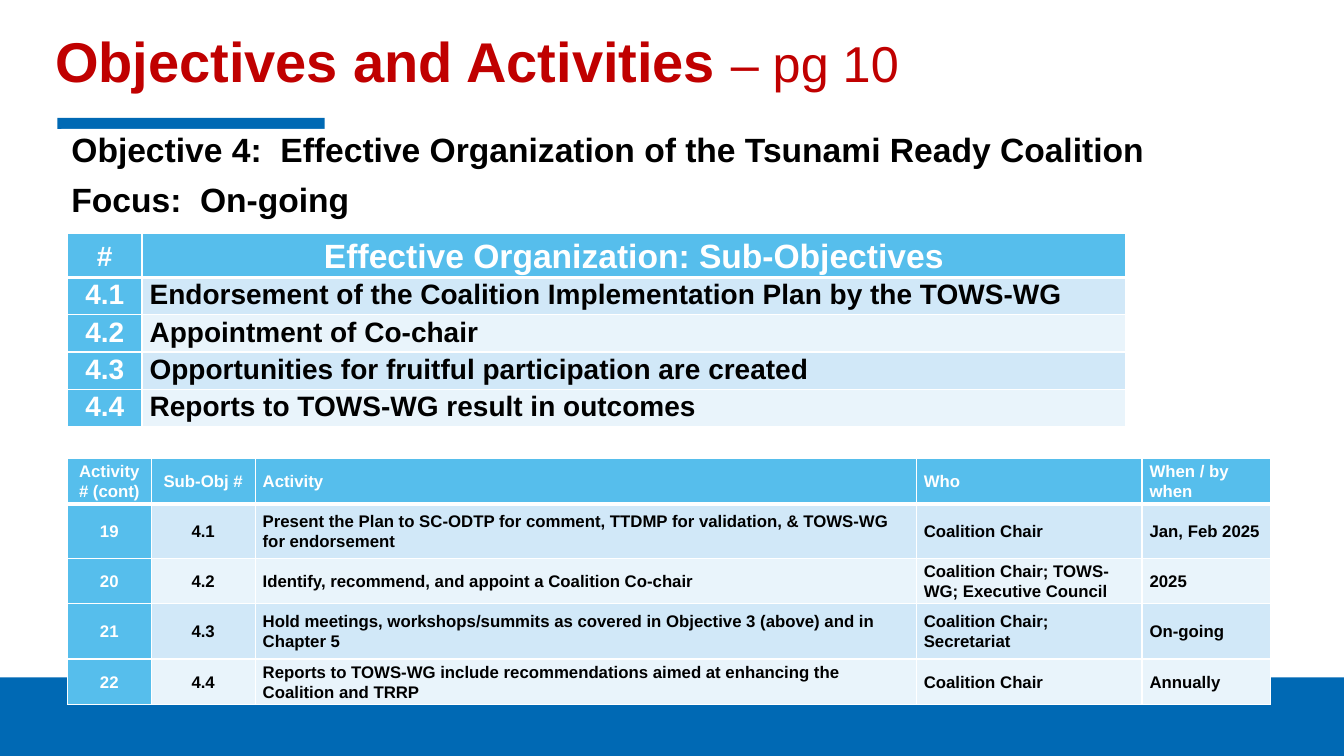
from dataclasses import dataclass

from lxml import etree
from pptx import Presentation, util as u
from pptx.dml.color import RGBColor
from pptx.enum import shapes, text
from pptx.oxml import ns


@dataclass(frozen=True)
class Theme:
    font: str = "Arial"
    title: str = "C00000"
    brand: str = "0069B4"
    header: str = "56BEEC"
    bands: tuple = ("D1E8F8", "E9F4FB")
    light: str = "FFFFFF"
    dark: str = "000000"
    title_size: int = 40
    page_size: int = 36
    body_size: int = 24
    sub_size: int = 20
    small_size: int = 12


SUB_OBJECTIVES = [
    ["#", "Effective Organization: Sub-Objectives"],
    ["4.1", "Endorsement of the Coalition Implementation Plan by the TOWS-WG"],
    ["4.2", "Appointment of Co-chair"],
    ["4.3", "Opportunities for fruitful participation are created"],
    ["4.4", "Reports to TOWS-WG result in outcomes"],
]
ACTIVITIES = [
    ["Activity # (cont)", "Sub-Obj #", "Activity", "Who", "When / by when"],
    ["19", "4.1", "Present the Plan to SC-ODTP for comment, TTDMP for validation, "
     "& TOWS-WG for endorsement", "Coalition Chair", "Jan, Feb 2025"],
    ["20", "4.2", "Identify, recommend, and appoint a Coalition Co-chair",
     "Coalition Chair; TOWS-WG; Executive Council", "2025"],
    ["21", "4.3", "Hold meetings, workshops/summits as covered in Objective 3 (above) "
     "and in Chapter 5", "Coalition Chair; Secretariat", "On-going"],
    ["22", "4.4", "Reports to TOWS-WG include recommendations aimed at enhancing the "
     "Coalition and TRRP", "Coalition Chair", "Annually"],
]


def add_run(p, content, *, size, color, font, bold=True):
    r = p.add_run()
    r.text = content
    r.font.size, r.font.name, r.font.bold = u.Pt(size), font, bold
    r.font.color.rgb = RGBColor.from_string(color)


def set_borders(cell, color, **widths):
    """Draw cell edges; widths maps L, R, T and B to points."""
    tcPr = cell._tc.get_or_add_tcPr()
    for i, (side, width) in enumerate(widths.items()):
        ln = etree.Element(ns.qn(f"a:ln{side}"), w=str(u.Pt(width)))
        fill = etree.SubElement(ln, ns.qn("a:solidFill"))
        etree.SubElement(fill, ns.qn("a:srgbClr"), val=color)
        tcPr.insert(i, ln)


class Deck:
    def __init__(self, prs, theme):
        self.theme = theme
        self.s = prs.slides.add_slide(prs.slide_layouts[6])

    def rect(self, box, color):
        sp = self.s.shapes.add_shape(shapes.MSO_SHAPE.RECTANGLE, *map(u.Cm, box))
        sp.shadow.inherit = False
        sp.fill.solid()
        sp.fill.fore_color.rgb = RGBColor.from_string(color)
        sp.line.fill.background()

    def text_box(self, box, paragraphs, anchor, fill=None):
        """Each paragraph is a list of (text, size, color, bold) runs."""
        sp = self.s.shapes.add_textbox(*map(u.Cm, box))
        if fill:
            sp.fill.solid()
            sp.fill.fore_color.rgb = RGBColor.from_string(fill)
        tf = sp.text_frame
        tf.word_wrap, tf.vertical_anchor = True, anchor
        for i, runs in enumerate(paragraphs):
            p = tf.add_paragraph() if i else tf.paragraphs[0]
            p.line_spacing = 0.9
            if i:
                p.space_before = u.Pt(9.8)
            for content, size, color, bold in runs:
                add_run(p, content, size=size, color=color, bold=bold, font=self.theme.font)

    def table(self, left, top, widths, heights, rows, size, centered,
              title_size=None, body_anchor=text.MSO_ANCHOR.MIDDLE):
        """centered holds (columns centred in the header, columns centred below it)."""
        t = self.theme
        box = left, top, sum(widths), sum(heights)
        tbl = self.s.shapes.add_table(len(rows), len(widths), *map(u.Cm, box)).table
        for col, width in zip(tbl.columns, widths):
            col.width = u.Cm(width)
        for i, (row, height) in enumerate(zip(rows, heights)):
            tbl.rows[i].height = u.Cm(height)
            for j, content in enumerate(row):
                cell = tbl.cell(i, j)
                head = i == 0 or j == 0
                cell.fill.solid()
                cell.fill.fore_color.rgb = RGBColor.from_string(
                    t.header if head else t.bands[(i - 1) % 2])
                set_borders(cell, t.light, L=1, R=1, T=3 if i == 1 else 1,
                            B=3 if i == 0 else 1)
                cell.margin_left = cell.margin_right = u.Cm(0.19)
                cell.margin_top = cell.margin_bottom = 0
                cell.vertical_anchor = body_anchor if i else text.MSO_ANCHOR.MIDDLE
                p = cell.text_frame.paragraphs[0]
                p.line_spacing = 1.07
                if j < centered[min(i, 1)]:
                    p.alignment = text.PP_ALIGN.CENTER
                add_run(p, content, font=t.font, color=t.light if head else t.dark,
                        size=title_size if title_size and i == 0 and j else size)


def main():
    prs = Presentation()
    prs.slide_width, prs.slide_height = u.Cm(33.87), u.Cm(19.05)
    t = Theme()
    deck = Deck(prs, t)

    deck.rect((1.45, 2.97, 6.73, 0.28), t.brand)
    deck.rect((0, 17.07, 33.87, 1.98), t.brand)
    deck.text_box((1.14, 0.23, 29.21, 2.79),
                  [[("Objectives and Activities ", t.title_size, t.title, True),
                    ("– pg 10", t.page_size, t.title, False)]],
                  text.MSO_ANCHOR.MIDDLE)
    objective = ["Objective 4:  Effective Organization of the Tsunami Ready Coalition",
                 "Focus:  On-going"]
    deck.text_box((1.55, 3.25, 32.32, 1.47),
                  [[(line, t.body_size, t.dark, True)] for line in objective],
                  text.MSO_ANCHOR.TOP, fill=t.light)
    deck.table(1.7, 5.87, [1.88, 24.79], [1.12] + [0.94] * 4, SUB_OBJECTIVES,
               t.sub_size, centered=(2, 1), title_size=t.body_size,
               body_anchor=text.MSO_ANCHOR.TOP)
    deck.table(1.7, 11.56, [2.11, 2.62, 16.66, 5.69, 3.23], [1.14, 1.37, 1.14, 1.4, 1.14],
               ACTIVITIES, t.small_size, centered=(2, 2))
    prs.save("out.pptx")


if __name__ == "__main__":
    main()
